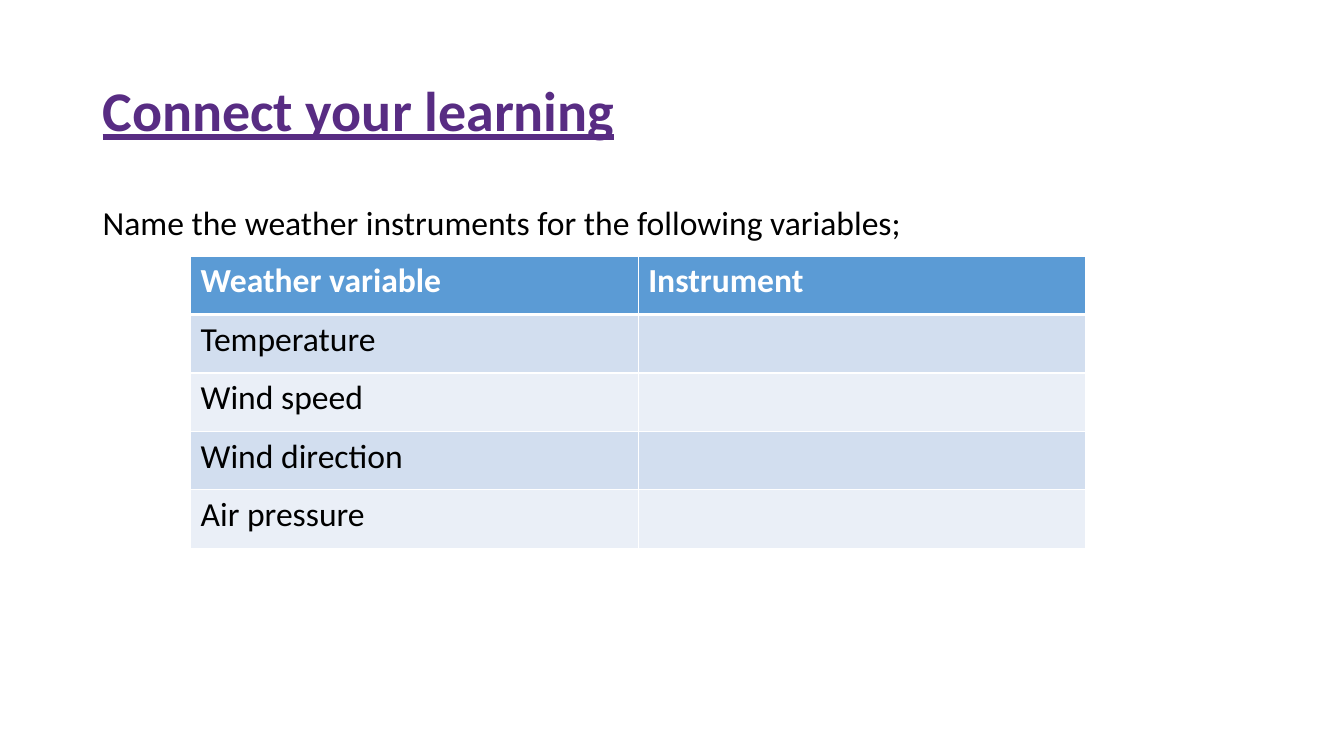
from lxml.etree import SubElement
from pptx import Presentation
from pptx.dml.color import RGBColor
from pptx.enum.text import MSO_ANCHOR
from pptx.oxml.ns import qn
from pptx.util import Inches, Pt

TITLE = "Connect your learning"
PROMPT = "Name the weather instruments for the following variables;"
ROWS = [
    ("Weather variable", "Instrument"),
    ("Temperature", ""),
    ("Wind speed", ""),
    ("Wind direction", ""),
    ("Air pressure", ""),
]

COLORS = {
    "title": "582C83",
    "text": "000000",
    "white": "FFFFFF",
    "header": "5B9BD5",
    "odd": "D2DEEF",
    "even": "EAEFF7",
}
FONT = "Calibri"
SLIDE_W, SLIDE_H = 13.33, 7.5
MARGIN = 0.92
TEXT_W = 11.5
TABLE_LEFT, TABLE_TOP = 1.89, 2.54
COL_W, ROW_H = 4.44, 0.58


def rgb(name):
    return RGBColor.from_string(COLORS[name])


def add_run(p, text, size, color, bold=False, underline=False):
    r = p.add_run()
    r.text = text
    font = r.font
    font.name, font.size = FONT, Pt(size)
    font.bold, font.underline = bold, underline
    font.color.rgb = rgb(color)


def add_text(slide, top, height, text, anchor, **style):
    box = slide.shapes.add_textbox(
        Inches(MARGIN), Inches(top), Inches(TEXT_W), Inches(height))
    tf = box.text_frame
    tf.word_wrap = True
    tf.vertical_anchor = anchor
    p = tf.paragraphs[0]
    p.line_spacing = 0.9
    add_run(p, text, **style)


def set_borders(cell, widths):
    """Draw white cell edges; widths maps an edge tag to points."""
    tc_pr = cell._tc.get_or_add_tcPr()
    for i, (edge, width) in enumerate(widths.items()):
        ln = SubElement(tc_pr, qn(f"a:{edge}"), w=str(Pt(width)))
        fill = SubElement(ln, qn("a:solidFill"))
        SubElement(fill, qn("a:srgbClr"), val=COLORS["white"])
        tc_pr.insert(i, ln)


def add_weather_table(slide):
    n_rows, n_cols = len(ROWS), len(ROWS[0])
    table = slide.shapes.add_table(
        n_rows, n_cols, Inches(TABLE_LEFT), Inches(TABLE_TOP),
        Inches(COL_W * n_cols), Inches(ROW_H * n_rows)).table
    for i, row in enumerate(ROWS):
        is_header = i == 0
        band = "header" if is_header else "odd" if i % 2 else "even"
        for j, text in enumerate(row):
            cell = table.cell(i, j)
            cell.fill.solid()
            cell.fill.fore_color.rgb = rgb(band)
            set_borders(cell, {"lnL": 1, "lnR": 1,
                               "lnT": 3 if i == 1 else 1,
                               "lnB": 3 if is_header else 1})
            p = cell.text_frame.paragraphs[0]
            if text:
                add_run(p, text, 24, "white" if is_header else "text",
                        bold=is_header)
            else:
                p.font.size = Pt(24)


def main():
    prs = Presentation()
    prs.slide_width, prs.slide_height = Inches(SLIDE_W), Inches(SLIDE_H)
    slide = prs.slides.add_slide(prs.slide_layouts[6])
    add_text(slide, 0.4, 1.45, TITLE, MSO_ANCHOR.MIDDLE,
             size=40, color="title", bold=True, underline=True)
    add_text(slide, 2, 0.55, PROMPT, MSO_ANCHOR.TOP, size=24, color="text")
    add_weather_table(slide)
    prs.save("out.pptx")


if __name__ == "__main__":
    main()
